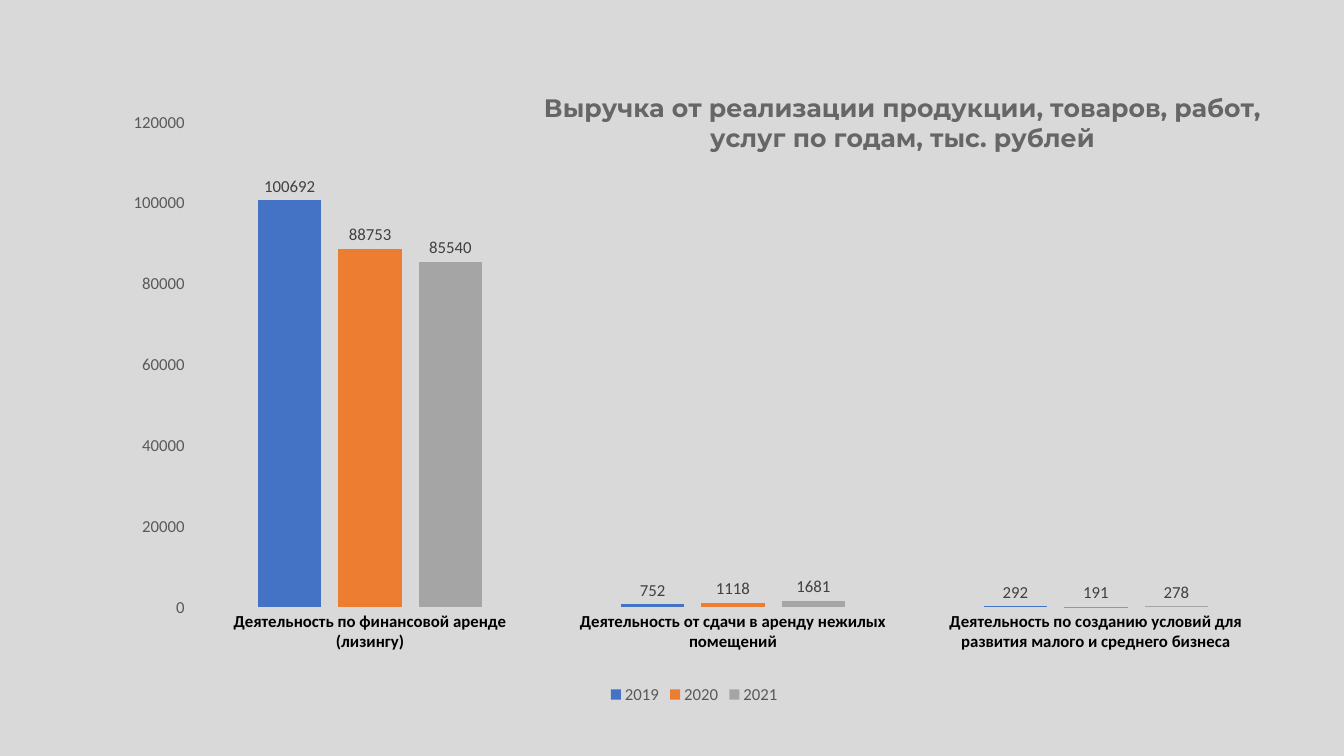
import pptx
import pptx.chart.data
import pptx.dml.color
import pptx.enum.chart
import pptx.oxml
import pptx.oxml.ns
import pptx.util

TITLE = [
    "Выручка от реализации продукции, товаров, работ,",
    "услуг по годам, тыс. рублей",
]
GROUPS = [
    "Деятельность по финансовой аренде (лизингу)",
    "Деятельность от сдачи в аренду нежилых помещений",
    "Деятельность по созданию условий для развития малого и среднего бизнеса",
]
SALES = {
    "2019": (100692, 752, 292),
    "2020": (88753, 1118, 191),
    "2021": (85540, 1681, 278),
}

Pt = pptx.util.Pt
XL = pptx.enum.chart


def rgb(code):
    return pptx.dml.color.RGBColor.from_string(code)


THEME = {
    "back": rgb("D9D9D9"),
    "rule": rgb("D9D9D9"),
    "bars": [rgb("4472C4"), rgb("ED7D31"), rgb("A5A5A5")],
    "base": {"name": "Calibri", "size": Pt(10), "color": rgb("000000")},
    "title": {"name": "Montserrat", "size": Pt(18), "bold": True,
              "color": rgb("666666")},
    "group": {"name": "Calibri", "size": Pt(12), "bold": True,
              "color": rgb("000000")},
    "scale": {"name": "Calibri", "size": Pt(12), "bold": False,
              "color": rgb("595959")},
    "label": {"name": "Calibri", "size": Pt(12), "bold": False,
              "color": rgb("404040")},
}
SLIDE = (960, 540)
FRAME = (75, 58.3, 841.7, 447.8)
PLOT = {"x": 0.071, "y": 0.065, "w": 0.924, "h": 0.774}
TITLE_SPOT = {"x": 0.37, "y": 0.01}


def style(font, look):
    for key, value in look.items():
        if key == "color":
            font.color.rgb = value
        else:
            setattr(font, key, value)


def rule(line):
    line.color.rgb = THEME["rule"]
    line.width = Pt(0.75)


def place(part, index, spot, inner=False):
    """Give a chart part a manual layout, in shares of the chart frame."""
    for old in part.findall(pptx.oxml.ns.qn("c:layout")):
        part.remove(old)
    rows = [("layoutTarget", "inner")] if inner else []
    rows += [(f"{key}Mode", "edge") for key in "xy"]
    rows += spot.items()
    body = "".join(f'<c:{tag} val="{value}"/>' for tag, value in rows)
    part.insert(index, pptx.oxml.parse_xml(
        f'<c:layout {pptx.oxml.ns.nsdecls("c")}>'
        f"<c:manualLayout>{body}</c:manualLayout></c:layout>"))


def add_title(chart):
    chart.has_title = True
    frame = chart.chart_title.text_frame
    for i, text in enumerate(TITLE):
        line = frame.add_paragraph() if i else frame.paragraphs[0]
        run = line.add_run()
        run.text = text
        style(line.font, THEME["title"])
        style(run.font, THEME["title"])
    place(chart.element.find(".//" + pptx.oxml.ns.qn("c:title")), 1, TITLE_SPOT)


def set_axes(chart):
    for axis, look in ((chart.category_axis, "group"),
                       (chart.value_axis, "scale")):
        axis.major_tick_mark = axis.minor_tick_mark = XL.XL_TICK_MARK.NONE
        style(axis.tick_labels.font, THEME[look])
    rule(chart.category_axis.format.line)
    scale = chart.value_axis
    scale.format.line.fill.background()
    scale.has_major_gridlines = True
    rule(scale.major_gridlines.format.line)


def set_bars(plot):
    plot.gap_width, plot.overlap = 219, -27
    plot.vary_by_categories = False
    for bars, color in zip(plot.series, THEME["bars"]):
        bars.invert_if_negative = False
        bars.format.fill.solid()
        bars.format.fill.fore_color.rgb = color
        labels = bars.data_labels
        labels.show_value = True
        labels.position = XL.XL_LABEL_POSITION.OUTSIDE_END
        style(labels.font, THEME["label"])


def add_sales(slide):
    data = pptx.chart.data.CategoryChartData()
    data.categories = GROUPS
    for year, values in SALES.items():
        data.add_series(year, values)
    chart = slide.shapes.add_chart(
        XL.XL_CHART_TYPE.COLUMN_CLUSTERED, *map(Pt, FRAME), data).chart
    style(chart.font, THEME["base"])
    add_title(chart)
    set_axes(chart)
    set_bars(chart.plots[0])
    chart.has_legend = True
    chart.legend.position = XL.XL_LEGEND_POSITION.BOTTOM
    chart.legend.include_in_layout = False
    style(chart.legend.font, THEME["scale"])
    area = chart.element.find(".//" + pptx.oxml.ns.qn("c:plotArea"))
    place(area, 0, PLOT, inner=True)


def main():
    deck = pptx.Presentation()
    deck.slide_width, deck.slide_height = map(Pt, SLIDE)
    slide = deck.slides.add_slide(deck.slide_layouts[6])
    slide.background.fill.solid()
    slide.background.fill.fore_color.rgb = THEME["back"]
    add_sales(slide)
    deck.save("out.pptx")


if __name__ == "__main__":
    main()
